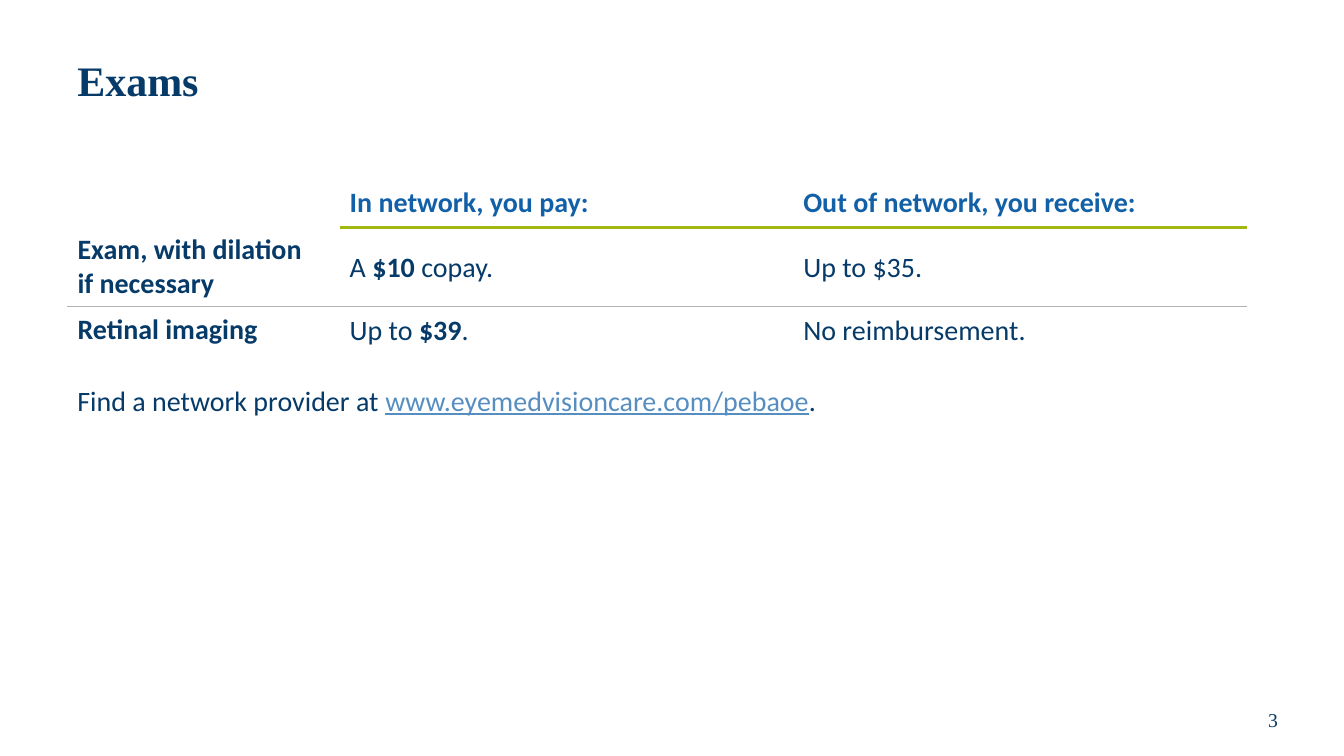
from lxml import etree
from pptx import Presentation
from pptx.dml.color import RGBColor
from pptx.enum.text import MSO_ANCHOR as ANCHOR, PP_ALIGN as ALIGN
from pptx.oxml.ns import qn
from pptx.util import Cm, Pt

COLORS = {"navy": "063A68", "blue": "1260A7", "link": "568EC1",
          "green": "A0B810", "gray": "B2B2B2"}
NO_GRID_STYLE = "{2D5ABB26-0587-4C30-8999-92F81FD0307C}"
LEFT = 1.7


class SlideBuilder:
    body_font = "Calibri"
    serif_font = "Times New Roman"
    body_size = 20

    def __init__(self, prs):
        self.s = prs.slides.add_slide(prs.slide_layouts[6])

    def fill_paragraph(self, p, runs, color="navy", size=body_size,
                       font=body_font, bold=None, spacing=None):
        """Fill a paragraph with (text, overrides) runs; \\v breaks a line."""
        p.font.name, p.font.size = font, Pt(size)
        if bold is not None:
            p.font.bold = bold
        if all("color" not in style for _, style in runs):
            p.font.color.rgb = RGBColor.from_string(COLORS[color])
        if spacing:
            p.line_spacing = spacing
        for text, style in runs:
            for i, line in enumerate(text.split("\v")):
                if i:
                    p.add_line_break()
                r = p.add_run()
                r.text = line
                if "bold" in style:
                    r.font.bold = style["bold"]
                if "color" in style:
                    r.font.color.rgb = RGBColor.from_string(COLORS[style["color"]])
                if "underline" in style:
                    r.font.underline = style["underline"]

    def text(self, x, y, w, h, runs, anchor=ANCHOR.TOP, align=ALIGN.LEFT, **style):
        tf = self.s.shapes.add_textbox(Cm(x), Cm(y), Cm(w), Cm(h)).text_frame
        tf.word_wrap = True
        tf.vertical_anchor = anchor
        p = tf.paragraphs[0]
        p.alignment = align
        self.fill_paragraph(p, runs, **style)

    def border(self, cell, side, color, width):
        tc_pr = cell._tc.get_or_add_tcPr()
        ln = etree.SubElement(tc_pr, qn(f"a:ln{side}"), w=str(Pt(width)))
        fill = etree.SubElement(ln, qn("a:solidFill"))
        etree.SubElement(fill, qn("a:srgbClr"), val=COLORS[color])

    def table(self, x, y, widths, heights, rows):
        table = self.s.shapes.add_table(
            len(rows), len(widths), Cm(x), Cm(y),
            Cm(sum(widths)), Cm(sum(heights))).table
        table.first_row = table.horz_banding = False
        table._tbl.tblPr.find(qn("a:tableStyleId")).text = NO_GRID_STYLE
        for column, width in zip(table.columns, widths):
            column.width = Cm(width)
        for i, (row, height) in enumerate(zip(rows, heights)):
            table.rows[i].height = Cm(height)
            for j, runs in enumerate(row):
                cell = table.cell(i, j)
                cell.vertical_anchor = ANCHOR.MIDDLE
                if i == 1 and j:
                    self.border(cell, "T", "green", 2.25)
                if i == 0 and j:
                    self.border(cell, "B", "green", 2.25)
                elif i == 1:
                    self.border(cell, "B", "gray", 0.5)
                cell.fill.background()
                is_header = i == 0 or j == 0
                mixed = any("bold" in style for _, style in runs)
                self.fill_paragraph(cell.text_frame.paragraphs[0], runs,
                                    color="navy" if i else "blue",
                                    bold=None if mixed else is_header,
                                    spacing=None if is_header else 1.07)


def main():
    prs = Presentation()
    prs.slide_width, prs.slide_height = Cm(33.87), Cm(19.05)
    slide = SlideBuilder(prs)
    serif = {"font": slide.serif_font, "anchor": ANCHOR.MIDDLE}
    plain, strong = {"bold": False}, {"bold": True}

    slide.text(30.6, 17.5, 2.97, 1.27, [("3", {})], size=14,
               align=ALIGN.CENTER, **serif)
    slide.text(LEFT, 0.64, 30.48, 2.92, [("Exams", {})], size=30, bold=True,
               spacing=0.9, **serif)
    slide.table(LEFT, 4.47, [6.86, 11.43, 11.43], [1.27, 1.98, 1.2], [
        [[], [("In network, you pay:", {})],
         [("Out of network, you receive:", {})]],
        [[("Exam, with dilation\vif necessary", {})],
         [("A ", plain), ("$10 ", strong), ("copay.", plain)],
         [("Up to $35.", {})]],
        [[("Retinal imaging", {})],
         [("Up to ", plain), ("$39", strong), (".", plain)],
         [("No reimbursement.", {})]],
    ])
    slide.text(LEFT, 9.53, 22.86, 1.11, [
        ("Find a network provider at ", {"color": "navy"}),
        ("www.eyemedvisioncare.com/pebaoe", {"color": "link", "underline": True}),
        (".", {"color": "navy"}),
    ])
    prs.save("out.pptx")


if __name__ == "__main__":
    main()
